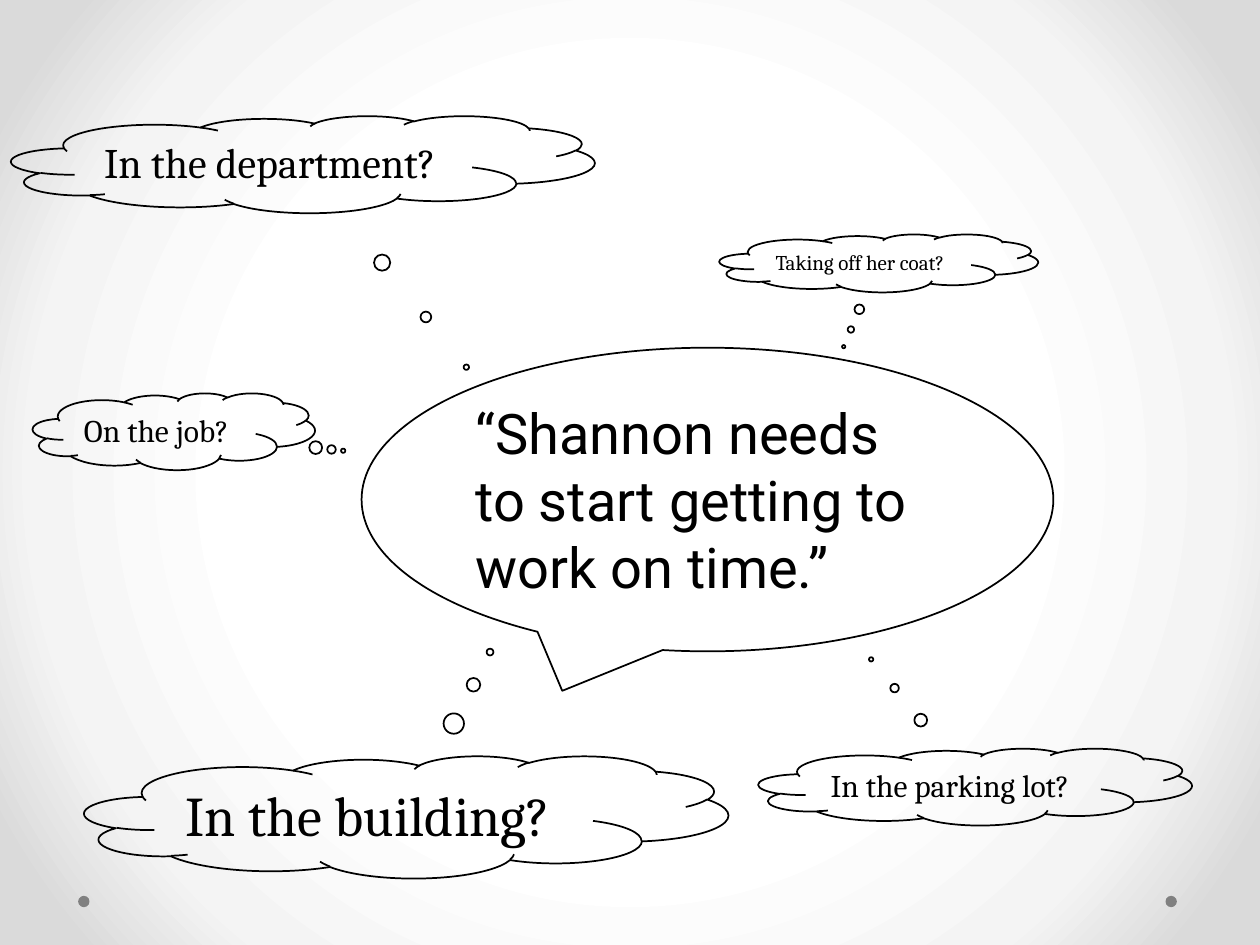
from dataclasses import dataclass

from pptx import Presentation
from pptx.dml.color import RGBColor
from pptx.enum.shapes import MSO_SHAPE
from pptx.enum.text import MSO_ANCHOR, MSO_AUTO_SIZE, PP_ALIGN
from pptx.oxml import parse_xml
from pptx.oxml.ns import nsdecls
from pptx.util import Inches, Pt

CLOUD = MSO_SHAPE.CLOUD_CALLOUT
SPEECH = MSO_SHAPE.OVAL_CALLOUT
OVAL = MSO_SHAPE.OVAL
TOP = MSO_ANCHOR.TOP
LEFT = PP_ALIGN.LEFT
GROW = MSO_AUTO_SIZE.SHAPE_TO_FIT_TEXT

BLACK = "000000"
GRAY = "808080"
STOPS = [(50, "FFFFFF"), (76, "F4F4F4"), (92, "DADADA")]


@dataclass
class Bubble:
    text: str
    box: tuple[float, float, float, float]
    tail: tuple[float, float]
    size: int
    font: str = "Cambria"
    kind: MSO_SHAPE = CLOUD
    wrap: bool = False


BUBBLES = [
    Bubble("“Shannon needs to start getting to work on time.”",
           (2.87, 2.76, 5.49, 2.41), (-0.21, 0.63), 32, "Roboto", SPEECH, True),
    Bubble("In the department?", (0.09, 0.92, 4.63, 0.77), (0.28, 2.09), 24),
    Bubble("In the parking lot?", (6.02, 5.94, 3.44, 0.61), (-0.24, -1.66), 18),
    Bubble("Taking off her coat?", (5.71, 1.86, 2.53, 0.46), (-0.11, 1.44), 12),
    Bubble("In the building?", (0.67, 6, 5.11, 0.97), (0.13, -1.35), 32),
    Bubble("On the job?", (0.26, 3.12, 2.24, 0.61), (0.6, 0.25), 18),
]


def color(code: str) -> RGBColor:
    return RGBColor.from_string(code)


def paint_back(slide) -> None:
    slide.background.fill.gradient()
    old = slide.element.xpath(".//p:bgPr/a:gradFill")[0]
    stops = "".join(
        f'<a:gs pos="{pos * 1000}"><a:srgbClr val="{code}"/></a:gs>'
        for pos, code in STOPS
    )
    new = parse_xml(
        f'<a:gradFill {nsdecls("a")} rotWithShape="1"><a:gsLst>{stops}</a:gsLst>'
        '<a:path path="circle"><a:fillToRect l="50000" t="50000" r="50000" '
        'b="50000"/></a:path></a:gradFill>'
    )
    old.getparent().replace(old, new)


def draw_dot(slide, left: float) -> None:
    dot = slide.shapes.add_shape(
        OVAL, Inches(left), Inches(7.11), Inches(0.09), Inches(0.09))
    dot.shadow.inherit = False
    dot.fill.solid()
    dot.fill.fore_color.rgb = color(GRAY)
    dot.line.fill.background()


def draw_bubble(slide, item: Bubble) -> None:
    shape = slide.shapes.add_shape(item.kind, *map(Inches, item.box))
    shape.shadow.inherit = False
    shape.adjustments[0], shape.adjustments[1] = item.tail
    shape.fill.background()
    shape.line.color.rgb = color(BLACK)
    shape.line.width = Pt(1)

    frame = shape.text_frame
    frame.word_wrap = item.wrap
    frame.auto_size = GROW
    frame.vertical_anchor = TOP
    para = frame.paragraphs[0]
    para.alignment = LEFT
    run = para.add_run()
    run.text = item.text
    run.font.name = item.font
    run.font.size = Pt(item.size)
    run.font.color.rgb = color(BLACK)


def main() -> None:
    deck = Presentation()
    deck.slide_width = Inches(10)
    deck.slide_height = Inches(7.5)
    slide = deck.slides.add_slide(deck.slide_layouts[6])
    paint_back(slide)
    for left in (9.25, 0.62):
        draw_dot(slide, left)
    for item in BUBBLES:
        draw_bubble(slide, item)
    deck.save("out.pptx")


if __name__ == "__main__":
    main()
